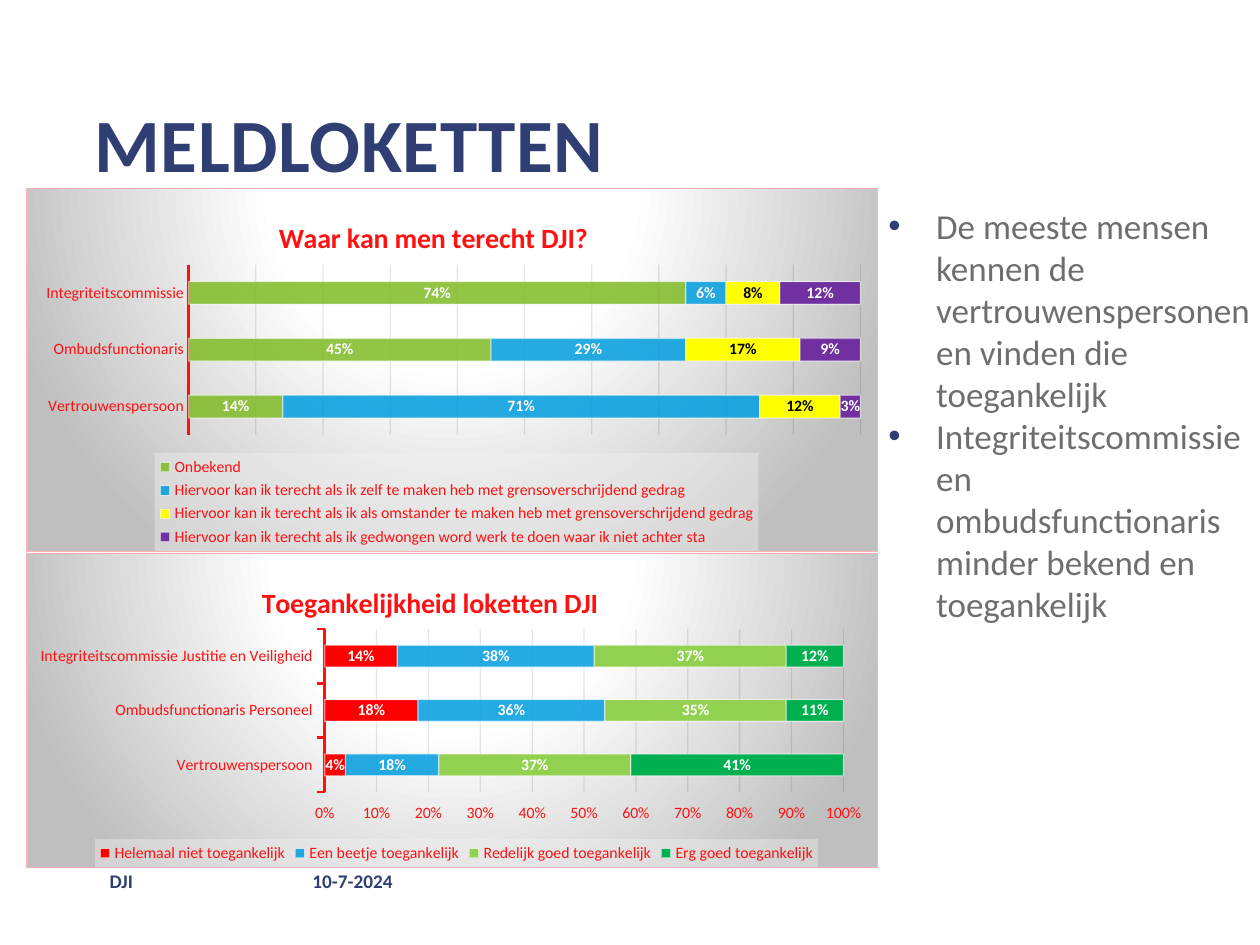
from lxml import etree
from pptx import Presentation
from pptx.chart.data import CategoryChartData
from pptx.dml.color import RGBColor
from pptx.enum.chart import XL_CHART_TYPE, XL_LABEL_POSITION, XL_LEGEND_POSITION, XL_TICK_MARK
from pptx.enum.text import MSO_ANCHOR, PP_ALIGN
from pptx.oxml import parse_xml
from pptx.oxml.ns import nsdecls, qn
from pptx.util import Inches, Pt

FULL = XL_CHART_TYPE.BAR_STACKED_100
STACK = XL_CHART_TYPE.BAR_STACKED
CENTER = XL_LABEL_POSITION.CENTER
BOTTOM = XL_LEGEND_POSITION.BOTTOM
NONE, OUT = XL_TICK_MARK.NONE, XL_TICK_MARK.OUTSIDE
TOP, MIDDLE = MSO_ANCHOR.TOP, MSO_ANCHOR.MIDDLE
LEFT = PP_ALIGN.LEFT

NAVY = RGBColor(0x2F, 0x3F, 0x73)
GRAY = RGBColor(0x6E, 0x6E, 0x6E)
SCARLET = RGBColor(0xFF, 0x11, 0x11)
RED = RGBColor(0xFF, 0x00, 0x00)
OLIVE = RGBColor(0x7F, 0xBA, 0x25)
BLUE = RGBColor(0x00, 0x9C, 0xDE)
YELLOW = RGBColor(0xFF, 0xFF, 0x00)
PURPLE = RGBColor(0x70, 0x30, 0xA0)
LIME = RGBColor(0x92, 0xD0, 0x50)
GREEN = RGBColor(0x00, 0xB0, 0x50)
WHITE = RGBColor(0xFF, 0xFF, 0xFF)
BLACK = RGBColor(0x00, 0x00, 0x00)

PANEL = f"""<c:spPr {nsdecls("c", "a")}>
<a:gradFill><a:gsLst>
<a:gs pos="0"><a:srgbClr val="FFFFFF"/></a:gs>
<a:gs pos="39000"><a:srgbClr val="FFFFFF"/></a:gs>
<a:gs pos="100000"><a:srgbClr val="BFBFBF"/></a:gs>
</a:gsLst><a:path path="circle">
<a:fillToRect l="50000" t="-80000" r="50000" b="180000"/></a:path></a:gradFill>
<a:ln w="9525"><a:solidFill><a:srgbClr val="FFB0B0"/></a:solidFill></a:ln></c:spPr>"""
VEIL = f"""<c:spPr {nsdecls("c", "a")}><a:solidFill><a:srgbClr val="F2F2F2">
<a:alpha val="40000"/></a:srgbClr></a:solidFill></c:spPr>"""


def fade(node, share):
    for color in node.iter(qn("a:srgbClr")):
        etree.SubElement(color, qn("a:alpha")).set("val", str(share * 1000))


def place(node, index, box, inner=False):
    for old in node.findall(qn("c:layout")):
        node.remove(old)
    layout = parse_xml(f"<c:layout {nsdecls('c')}><c:manualLayout/></c:layout>")
    rules = [("layoutTarget", "inner")] if inner else []
    rules += [("xMode", "edge"), ("yMode", "edge"), *zip("xywh", box)]
    for name, value in rules:
        etree.SubElement(layout[0], qn(f"c:{name}")).set("val", str(value))
    node.insert(index, layout)


class Deck:
    face = "Calibri"

    def __init__(self):
        self.file = Presentation()
        self.file.slide_width, self.file.slide_height = Inches(10), Inches(7.5)
        self.slide = self.file.slides.add_slide(self.file.slide_layouts[5])

    def area(self, x, y, w, h):
        wide, high = self.file.slide_width, self.file.slide_height
        return [int(share * size / 100) for share, size in zip((x, y, w, h), (wide, high) * 2)]

    def style(self, font, size, color, bold=False):
        font.name, font.size, font.bold = self.face, Pt(size), bold
        font.color.rgb = color

    def frame(self, shape, anchor):
        frame = shape.text_frame
        frame.word_wrap, frame.vertical_anchor = True, anchor
        frame.margin_left = frame.margin_right = frame.margin_top = frame.margin_bottom = 0
        return frame

    def run(self, para, text, *look):
        para.alignment = LEFT
        run = para.add_run()
        run.text = text
        self.style(run.font, *look)
        return run

    def title(self, text, box):
        shape = self.slide.shapes.title
        shape.left, shape.top, shape.width, shape.height = self.area(*box)
        run = self.run(self.frame(shape, TOP).paragraphs[0], text, 43, NAVY, True)
        run.font._element.set("spc", "40")

    def label(self, text, box):
        frame = self.frame(self.slide.shapes.add_textbox(*self.area(*box)), MIDDLE)
        self.run(frame.paragraphs[0], text, 11, NAVY, True)

    def points(self, texts, box):
        frame = self.frame(self.slide.shapes.add_textbox(*self.area(*box)), TOP)
        for i, text in enumerate(texts):
            para = frame.add_paragraph() if i else frame.paragraphs[0]
            props = para._p.get_or_add_pPr()
            props.set("marL", str(Inches(0.38)))
            props.set("indent", str(-Inches(0.38)))
            color = etree.SubElement(props, qn("a:buClr"))
            etree.SubElement(color, qn("a:srgbClr")).set("val", str(NAVY))
            etree.SubElement(props, qn("a:buFont")).set("typeface", "Arial")
            etree.SubElement(props, qn("a:buChar")).set("char", "•")
            self.run(para, text, 20, GRAY)

    def bars(self, kind, head, cats, rows, box, spots, tick, scale):
        data = CategoryChartData(number_format="0%")
        data.categories = cats
        for name, values, *_ in rows:
            data.add_series(name, values)
        chart = self.slide.shapes.add_chart(kind, *self.area(*box), data).chart
        self.style(chart.font, 10, SCARLET)
        root = chart._chartSpace
        root.find(qn("c:chart")).addnext(parse_xml(PANEL))
        chart.has_title = True
        self.run(chart.chart_title.text_frame.paragraphs[0], head, 16, SCARLET, True)
        chart.chart_title.include_in_layout = False
        chart.has_legend = True
        legend = chart.legend
        legend.position, legend.include_in_layout = BOTTOM, False
        self.style(legend.font, 9, SCARLET)
        legend._element.find(qn("c:txPr")).addprevious(parse_xml(VEIL))
        self.axes(chart, tick, scale)
        plot = chart.plots[0]
        plot.gap_width, plot.overlap, plot.vary_by_categories = 150, 100, False
        for series, row in zip(plot.series, rows):
            self.paint(series, *row[2:])
        place(chart.chart_title._element, 1, spots[0])
        place(root.find(".//" + qn("c:plotArea")), 0, spots[1], True)
        place(legend._element, 1, spots[2])

    def axes(self, chart, tick, scale):
        cat, val = chart.category_axis, chart.value_axis
        cat.major_tick_mark, val.major_tick_mark = tick, OUT
        cat.format.line.color.rgb, cat.format.line.width = SCARLET, Pt(1.5)
        val.format.line.fill.background()
        val.minimum_scale, val.maximum_scale, val.major_unit = 0, 1, 0.1
        val.visible = scale
        for axis in (cat, val):
            self.style(axis.tick_labels.font, 9, SCARLET)
        val.tick_labels.number_format = "0%"
        val.tick_labels.number_format_is_linked = False
        val.has_major_gridlines = True
        line = val.major_gridlines.format.line
        line.color.rgb, line.width = BLACK, Pt(0.75)
        fade(val._element.find(qn("c:majorGridlines")), 10)

    def paint(self, series, color, ink=WHITE):
        form = series.format
        form.fill.solid()
        form.fill.fore_color.rgb = color
        if color in (OLIVE, BLUE):
            fade(series._element.find(qn("c:spPr")), 85)
        form.line.color.rgb, form.line.width = WHITE, Pt(0.75)
        fade(series._element.find(".//" + qn("a:ln")), 50)
        tags = series.data_labels
        tags.show_value, tags.position = True, CENTER
        tags.number_format, tags.number_format_is_linked = "0%", False
        self.style(tags.font, 9, ink, True)


def main():
    deck = Deck()
    deck.label("DJI", (8.7, 91.87, 15, 2.67))
    deck.label("10-7-2024", (24.8, 91.87, 13, 2.67))
    deck.title("MELDLOKETTEN", (7.5, 10.27, 63, 9.6))
    deck.points(["De meeste mensen kennen de vertrouwenspersonen en vinden die toegankelijk",
                 "Integriteitscommissie en ombudsfunctionaris minder bekend en toegankelijk"],
                (70.5, 21.6, 29.5, 14.53))
    deck.bars(FULL, "Waar kan men terecht DJI?",
              ["Vertrouwenspersoon", "Ombudsfunctionaris", "Integriteitscommissie"],
              [("Onbekend", (0.14, 0.45, 0.74), OLIVE),
               ("Hiervoor kan ik terecht als ik zelf te maken heb met grensoverschrijdend gedrag",
                (0.71, 0.29, 0.06), BLUE),
               ("Hiervoor kan ik terecht als ik als omstander te maken heb met grensoverschrijdend gedrag",
                (0.12, 0.17, 0.08), YELLOW, BLACK),
               ("Hiervoor kan ik terecht als ik gedwongen word werk te doen waar ik niet achter sta",
                (0.03, 0.09, 0.12), PURPLE)],
              (2.1, 19.87, 67.6, 38.53),
              [(0.29, 0.07), (0.19, 0.21, 0.79, 0.47), (0.15, 0.73, 0.71, 0.27)], NONE, False)
    deck.bars(STACK, "Toegankelijkheid loketten DJI",
              ["Vertrouwenspersoon", "Ombudsfunctionaris Personeel",
               "Integriteitscommissie Justitie en Veiligheid"],
              [("Helemaal niet toegankelijk", (0.04, 0.18, 0.14), RED),
               ("Een beetje toegankelijk", (0.18, 0.36, 0.38), BLUE),
               ("Redelijk goed toegankelijk", (0.37, 0.35, 0.37), LIME),
               ("Erg goed toegankelijk", (0.41, 0.11, 0.12), GREEN)],
              (2.1, 58.53, 67.6, 33.33),
              [(0.27, 0.08), (0.35, 0.24, 0.61, 0.52), (0.08, 0.91, 0.85, 0.09)], OUT, True)
    deck.file.save("out.pptx")


if __name__ == "__main__":
    main()
